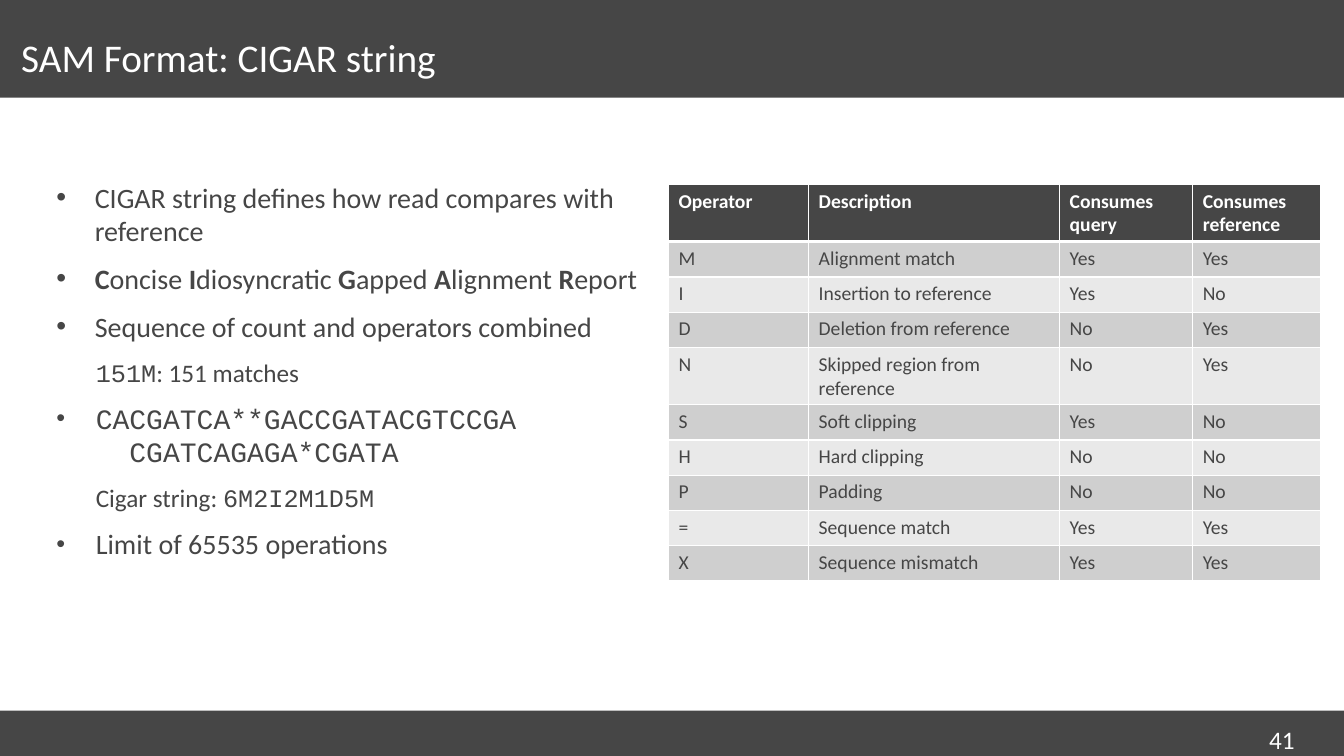
import pptx
import pptx.dml.color
import pptx.enum.shapes
import pptx.enum.text
import pptx.util
from lxml import etree
from pptx.oxml.ns import qn
from pptx.util import Inches

CHARCOAL = pptx.dml.color.RGBColor(0x46, 0x46, 0x46)
WHITE = pptx.dml.color.RGBColor(0xFF, 0xFF, 0xFF)
BAND_DARK = pptx.dml.color.RGBColor(0xCF, 0xCF, 0xCF)
BAND_LIGHT = pptx.dml.color.RGBColor(0xE9, 0xE9, 0xE9)
SANS = "Calibri"
MONO = "Courier New"

ACRONYM = "Concise Idiosyncratic Gapped Alignment Report"
COLUMN_WIDTHS = [1.39, 2.49, 1.32, 1.27]
ROW_HEIGHT = 0.35
OPERATORS = [
    ("Operator", "Description", "Consumes query", "Consumes reference"),
    ("M", "Alignment match", "Yes", "Yes"),
    ("I", "Insertion to reference", "Yes", "No"),
    ("D", "Deletion from reference", "No", "Yes"),
    ("N", "Skipped region from reference", "No", "Yes"),
    ("S", "Soft clipping", "Yes", "No"),
    ("H", "Hard clipping", "No", "No"),
    ("P", "Padding", "No", "No"),
    ("=", "Sequence match", "Yes", "Yes"),
    ("X", "Sequence mismatch", "Yes", "Yes"),
]


def style_font(font, size, color, name=SANS, bold=False):
    font.name = name
    font.size = pptx.util.Pt(size)
    font.bold = bold
    font.color.rgb = color


def add_bar(slide, top, height):
    bar = slide.shapes.add_shape(
        pptx.enum.shapes.MSO_SHAPE.RECTANGLE,
        0, Inches(top), Inches(13.33), Inches(height))
    bar.shadow.inherit = False
    bar.fill.solid()
    bar.fill.fore_color.rgb = CHARCOAL
    bar.line.fill.background()


def set_title(slide, text):
    title = slide.shapes.title
    title.left, title.top = Inches(0.21), Inches(0.23)
    title.width, title.height = Inches(11.52), Inches(0.75)
    frame = title.text_frame
    frame.text = text
    frame.margin_left = frame.margin_right = 0
    frame.vertical_anchor = pptx.enum.text.MSO_ANCHOR.MIDDLE
    para = frame.paragraphs[0]
    para.alignment = pptx.enum.text.PP_ALIGN.LEFT
    para.line_spacing = 0.8
    style_font(para.runs[0].font, 28, WHITE)
    title.element.getparent().append(title.element)


def set_bullet(para, indent, bullet, bullet_percent):
    properties = para._p.get_or_add_pPr()
    properties.set("marL", str(Inches(indent)))
    properties.set("indent", str(-Inches(indent) if bullet else 0))
    if not bullet:
        etree.SubElement(properties, qn("a:buNone"))
        return
    color = etree.SubElement(properties, qn("a:buClr"))
    etree.SubElement(color, qn("a:srgbClr"), val=str(CHARCOAL))
    etree.SubElement(properties, qn("a:buSzPct"), val=str(bullet_percent * 1000))
    etree.SubElement(properties, qn("a:buFont"), typeface="Arial")
    etree.SubElement(properties, qn("a:buChar"), char="•")


def add_runs(para, pieces, size):
    for text, name, bold in pieces:
        for number, line in enumerate(text.split("\n")):
            if number:
                para.add_line_break()
            run = para.add_run()
            run.text = line
            style_font(run.font, size, CHARCOAL, name, bold)


def acronym_pieces(phrase):
    words = phrase.split()
    pieces = []
    for word in words:
        gap = "" if word is words[-1] else " "
        pieces += [(word[0], SANS, True), (word[1:] + gap, SANS, False)]
    return pieces


def add_body(slide):
    box = slide.shapes.add_textbox(
        Inches(0.56), Inches(1.74), Inches(5.82), Inches(5.04))
    frame = box.text_frame
    frame.word_wrap = True
    frame.margin_left = frame.margin_right = 0
    alignment = "CACGATCA**GACCGATACGTCCGA\n  CGATCAGAGA*CGATA"
    items = [
        (0.38, True, 100, [("CIGAR string defines how read compares with reference", SANS, False)]),
        (0.38, True, 100, acronym_pieces(ACRONYM)),
        (0.38, True, 100, [("Sequence of count and operators combined", SANS, False)]),
        (0.39, False, 100, [("151M", MONO, False), (": 151 matches", SANS, False)]),
        (0.39, True, 90, [(alignment, MONO, False)]),
        (0.39, False, 100, [("Cigar string: ", SANS, False), ("6M2I2M1D5M", MONO, False)]),
        (0.39, True, 90, [("Limit of 65535 operations", SANS, False)]),
    ]
    for number, (indent, bullet, percent, pieces) in enumerate(items):
        para = frame.add_paragraph() if number else frame.paragraphs[0]
        para.level = 0 if bullet else 1
        para.space_before = pptx.util.Pt(6 if number else 0)
        para.space_after = pptx.util.Pt(4)
        set_bullet(para, indent, bullet, percent)
        add_runs(para, pieces, 20 if bullet else 18)


def set_borders(cell, top, bottom):
    properties = cell._tc.get_or_add_tcPr()
    for side, points in (("L", 1), ("R", 1), ("T", top), ("B", bottom)):
        line = etree.SubElement(
            properties, qn("a:ln" + side), w=str(pptx.util.Pt(points)))
        fill = etree.SubElement(line, qn("a:solidFill"))
        etree.SubElement(fill, qn("a:srgbClr"), val=str(WHITE))


def add_operator_table(slide):
    table = slide.shapes.add_table(
        len(OPERATORS), len(COLUMN_WIDTHS), Inches(6.63), Inches(1.83),
        Inches(sum(COLUMN_WIDTHS)), Inches(ROW_HEIGHT * len(OPERATORS))).table
    table.horz_banding = False
    for column, width in zip(table.columns, COLUMN_WIDTHS):
        column.width = Inches(width)
    for row, values in enumerate(OPERATORS):
        header = row == 0
        band = CHARCOAL if header else BAND_DARK if row % 2 else BAND_LIGHT
        for column, value in enumerate(values):
            cell = table.cell(row, column)
            cell.text = value
            set_borders(cell, 3 if row == 1 else 1, 3 if header else 1)
            cell.fill.solid()
            cell.fill.fore_color.rgb = band
            style_font(cell.text_frame.paragraphs[0].runs[0].font, 14,
                       WHITE if header else CHARCOAL, bold=header)


def add_page_number(slide, number):
    box = slide.shapes.add_textbox(
        Inches(12.49), Inches(7.14), Inches(0.7), Inches(0.25))
    frame = box.text_frame
    frame.word_wrap = True
    frame.text = number
    style_font(frame.paragraphs[0].runs[0].font, 18, WHITE)


def main():
    deck = pptx.Presentation()
    deck.slide_width, deck.slide_height = Inches(13.33), Inches(7.5)
    slide = deck.slides.add_slide(deck.slide_layouts[5])
    add_bar(slide, 0, 0.97)
    add_bar(slide, 7.05, 0.45)
    add_body(slide)
    add_operator_table(slide)
    set_title(slide, "SAM Format: CIGAR string")
    add_page_number(slide, "41")
    deck.save("out.pptx")


if __name__ == "__main__":
    main()
